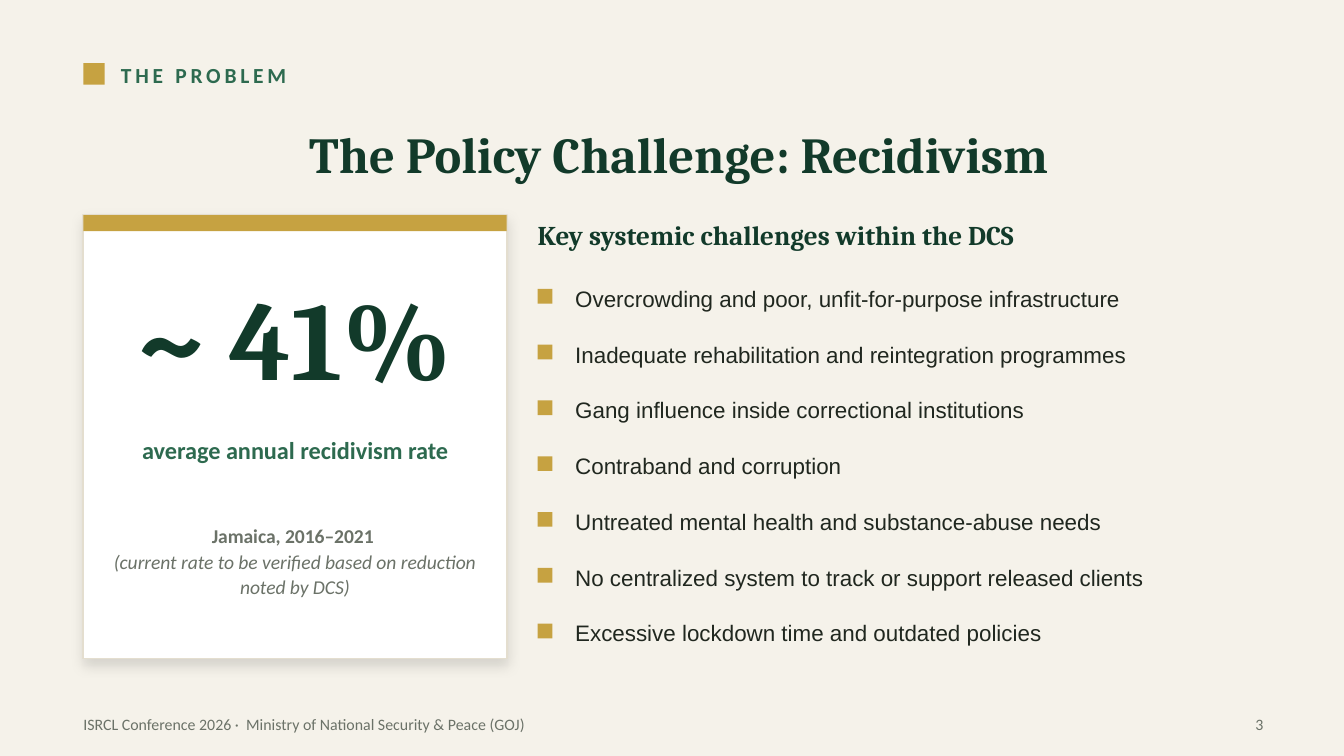
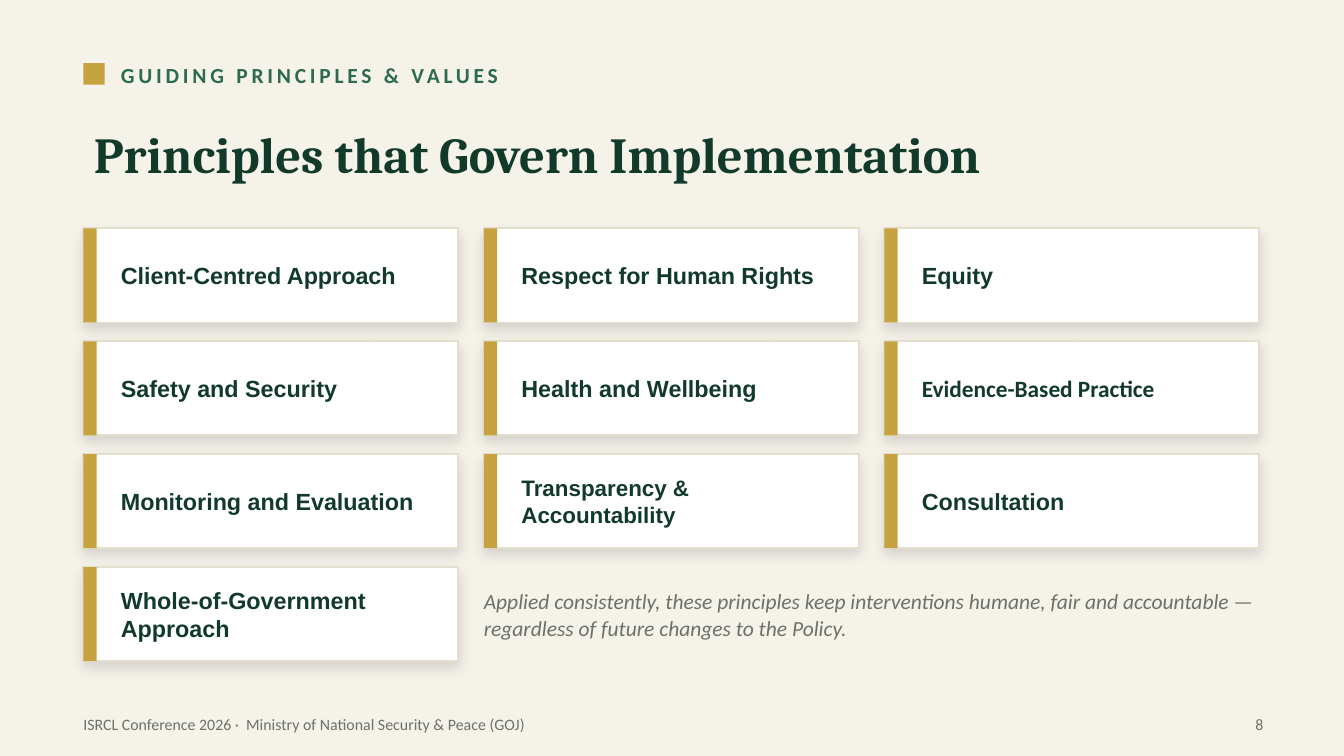
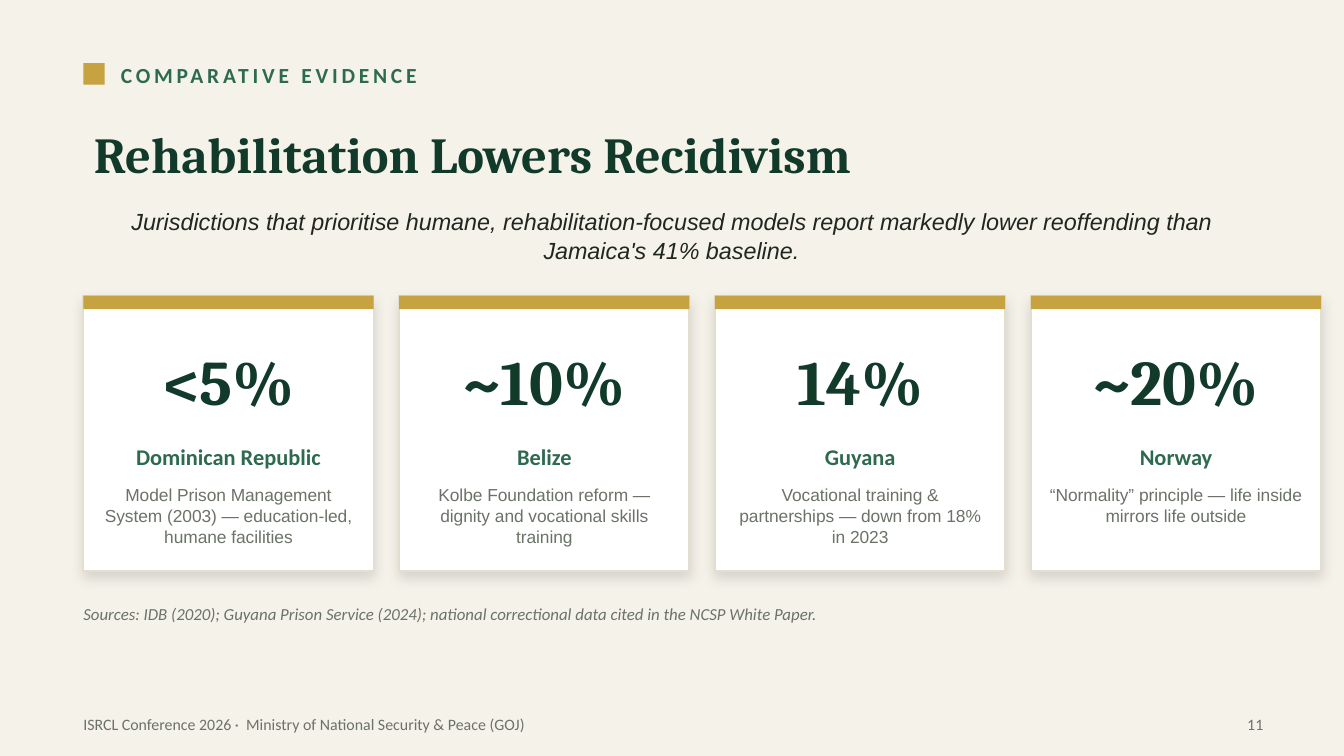
from lxml.etree import SubElement
from pptx import Presentation
from pptx.dml.color import RGBColor
from pptx.enum.shapes import MSO_SHAPE
from pptx.enum.text import MSO_ANCHOR, PP_ALIGN
from pptx.oxml.ns import qn
from pptx.util import Inches, Pt

# Shared look
CREAM, WHITE, EDGE = "F5F2EA", "FFFFFF", "E4DECF"
GOLD, PINE, GREEN = "C6A241", "123A2A", "2D6A4F"
INK, GREY = "20271F", "6B7268"
SERIF, SANS, PLAIN = "Cambria", "Calibri", "Arial"
LEFT, MID, RIGHT = PP_ALIGN.LEFT, PP_ALIGN.CENTER, PP_ALIGN.RIGHT
EDGE_X, WIDE = 0.62, 8.75
FOOTER = "ISRCL Conference 2026 ·  Ministry of National Security & Peace (GOJ)"


def color(code):
    return RGBColor.from_string(code)


def write(slide, box, lines, size, font, ink, bold=False, italic=False,
          align=LEFT, space=None, anchor=MSO_ANCHOR.MIDDLE, inset=(0, 0),
          track=None):
    """Write one line, or a list of (line, bold, italic) paragraphs."""
    frame = slide.shapes.add_textbox(*map(Inches, box)).text_frame
    frame.word_wrap = True
    frame.vertical_anchor = anchor
    frame.margin_left = frame.margin_right = Inches(inset[0])
    frame.margin_top = frame.margin_bottom = Inches(inset[1])
    if isinstance(lines, str):
        lines = [(lines, bold, italic)]
    for i, (line, heavy, slant) in enumerate(lines):
        para = frame.add_paragraph() if i else frame.paragraphs[0]
        run = para.add_run()
        run.text = line
        para.alignment = align
        if space:
            para.line_spacing = space
        para.font.size = Pt(size)
        para.font.name = font
        para.font.color.rgb = color(ink)
        para.font.bold = heavy
        para.font.italic = slant
        if track:
            run.font._element.set("spc", str(track * 100))


def block(slide, box, fill):
    shape = slide.shapes.add_shape(MSO_SHAPE.RECTANGLE, *map(Inches, box))
    shape.shadow.inherit = False
    shape.fill.solid()
    shape.fill.fore_color.rgb = color(fill)
    shape.line.fill.background()
    return shape


def card(slide, box, band, side=False):
    """White card with a soft shadow and a gold band on top or at the side."""
    x, y, w, h = box
    shape = block(slide, box, WHITE)
    shape.line.color.rgb = color(EDGE)
    shape.line.width = Pt(1)
    effects = shape._element.spPr.find(qn("a:effectLst"))
    shade = SubElement(effects, qn("a:outerShdw"), blurRad=str(Pt(7)),
                       dist=str(Pt(3)), dir="5400000", algn="bl",
                       rotWithShape="0")
    tone = SubElement(shade, qn("a:srgbClr"), val="000000")
    SubElement(tone, qn("a:alpha"), val="12000")
    block(slide, (x, y, band, h) if side else (x, y, w, band), GOLD)


def start(deck, label, title, number, align=LEFT):
    """Slide with background, section label, title and footer."""
    slide = deck.slides.add_slide(deck.slide_layouts[6])
    slide.background.fill.solid()
    slide.background.fill.fore_color.rgb = color(CREAM)
    block(slide, (EDGE_X, 0.47, 0.16, 0.16), GOLD)
    write(slide, (0.9, 0.42, 8, 0.28), label, 11.5, SANS, GREEN, bold=True,
          track=2)
    write(slide, (0.6, 0.78, 8.9, 0.72), title, 27, SERIF, PINE, bold=True,
          align=align, inset=(0.1, 0.05))
    write(slide, (EDGE_X, 5.24, 3.49, 0.3), FOOTER, 8.5, SANS, GREY)
    write(slide, (9, 5.24, 0.4, 0.3), str(number), 8.5, SANS, GREY,
          align=RIGHT)
    return slide


# Slide 1: headline rate and list of challenges
def rate(slide, box):
    x, y, w, h = box
    card(slide, box, 0.12)
    write(slide, (x, y + 0.3, w, 1.2), "~ 41%", 60, SERIF, PINE, bold=True,
          align=MID)
    write(slide, (x + 0.1, y + 1.5, w - 0.2, 0.5),
          "average annual recidivism rate", 13, SANS, GREEN, bold=True,
          align=MID)
    note = [("Jamaica, 2016–2021 ", True, False),
            ("(current rate to be verified based on reduction noted by DCS)",
             False, True)]
    write(slide, (x + 0.2, y + 2.02, w - 0.4, 1.1), note, 10.5, SANS, GREY,
          align=MID, space=1.08)


def issues(slide, box, head, items):
    x, y, w, h = box
    write(slide, (x, y, w, 0.4), head, 14.5, SERIF, PINE, bold=True)
    top, high = y + 0.49, 0.36
    step = (y + h - high - top) / (len(items) - 1)
    for i, item in enumerate(items):
        row = top + i * step
        block(slide, (x, row + 0.11, 0.11, 0.11), GOLD)
        write(slide, (x + 0.28, row, w - 0.25, high), item, 12, PLAIN, INK)


def problem(deck):
    slide = start(deck, "THE PROBLEM", "The Policy Challenge: Recidivism", 3,
                  align=MID)
    rate(slide, (EDGE_X, 1.6, 3.15, 3.3))
    issues(slide, (4, 1.55, 5.4, 3.34), "Key systemic challenges within the DCS", [
        "Overcrowding and poor, unfit-for-purpose infrastructure",
        "Inadequate rehabilitation and reintegration programmes",
        "Gang influence inside correctional institutions",
        "Contraband and corruption",
        "Untreated mental health and substance-abuse needs",
        "No centralized system to track or support released clients",
        "Excessive lockdown time and outdated policies",
    ])


# Slide 2: grid of principles
def tiles(slide, box, gap, items):
    x, y, w, h = box
    wide, high = (w - 2 * gap[0]) / 3, (h - 3 * gap[1]) / 4
    for i, (name, size, font) in enumerate(items):
        row, col = divmod(i, 3)
        left, top = x + col * (wide + gap[0]), y + row * (high + gap[1])
        card(slide, (left, top, wide, high), 0.1, side=True)
        write(slide, (left + 0.28, top, wide - 0.42, high), name, size, font,
              PINE, bold=True)
    # Closing remark fills the rest of the last row
    left = x + wide + gap[0]
    write(slide, (left, y + h - high, x + w - left, high),
          "Applied consistently, these principles keep interventions humane, "
          "fair and accountable — regardless of future changes to the Policy.",
          11.5, SANS, GREY, italic=True, space=1.03)


def values(deck):
    slide = start(deck, "GUIDING PRINCIPLES & VALUES",
                  "Principles that Govern Implementation", 8)
    tiles(slide, (EDGE_X, 1.7, WIDE, 3.22), (0.19, 0.14), [
        ("Client-Centred Approach", 12.5, PLAIN),
        ("Respect for Human Rights", 12.5, PLAIN),
        ("Equity", 12.5, PLAIN),
        ("Safety and Security", 12.5, PLAIN),
        ("Health and Wellbeing", 12.5, PLAIN),
        ("Evidence-Based Practice", 12.5, SANS),
        ("Monitoring and Evaluation", 12.5, PLAIN),
        ("Transparency & Accountability", 12, PLAIN),
        ("Consultation", 12.5, PLAIN),
        ("Whole-of-Government Approach", 12.5, PLAIN),
    ])


# Slide 3: rates by country
def country(slide, box, figure, name, detail):
    x, y, w, h = box
    card(slide, box, 0.1)
    write(slide, (x + 0.1, y + 0.28, w - 0.2, 0.7), figure, 34, SERIF, PINE,
          bold=True, align=MID)
    write(slide, (x + 0.12, y + 1.02, w - 0.24, 0.35), name, 12, SANS, GREEN,
          bold=True, align=MID)
    write(slide, (x + 0.14, y + 1.4, w - 0.28, 0.6), detail, 9.3, PLAIN, GREY,
          align=MID, space=1.02, anchor=MSO_ANCHOR.TOP)


def evidence(deck):
    slide = start(deck, "COMPARATIVE EVIDENCE",
                  "Rehabilitation Lowers Recidivism", 11)
    write(slide, (EDGE_X, 1.5, WIDE, 0.5),
          "Jurisdictions that prioritise humane, rehabilitation-focused models "
          "report markedly lower reoffending than Jamaica's 41% baseline.",
          12.5, PLAIN, INK, italic=True, align=MID, space=1.04)
    cases = [
        ("<5%", "Dominican Republic", "Model Prison Management System (2003) "
         "— education-led, humane facilities"),
        ("~10%", "Belize", "Kolbe Foundation reform — dignity and vocational "
         "skills training"),
        ("14%", "Guyana", "Vocational training & partnerships — down from 18% "
         "in 2023"),
        ("~20%", "Norway", "“Normality” principle — life inside mirrors life "
         "outside"),
    ]
    for i, case in enumerate(cases):
        country(slide, (EDGE_X + i * 2.35, 2.2, 2.16, 2.05), *case)
    write(slide, (EDGE_X, 4.42, WIDE, 0.3),
          "Sources: IDB (2020); Guyana Prison Service (2024); national "
          "correctional data cited in the NCSP White Paper.",
          9, SANS, GREY, italic=True)


def main():
    deck = Presentation()
    # Widescreen, 16 to 9
    deck.slide_width, deck.slide_height = Inches(10), Inches(10 * 9 / 16)
    problem(deck)
    values(deck)
    evidence(deck)
    deck.save("out.pptx")


if __name__ == "__main__":
    main()
